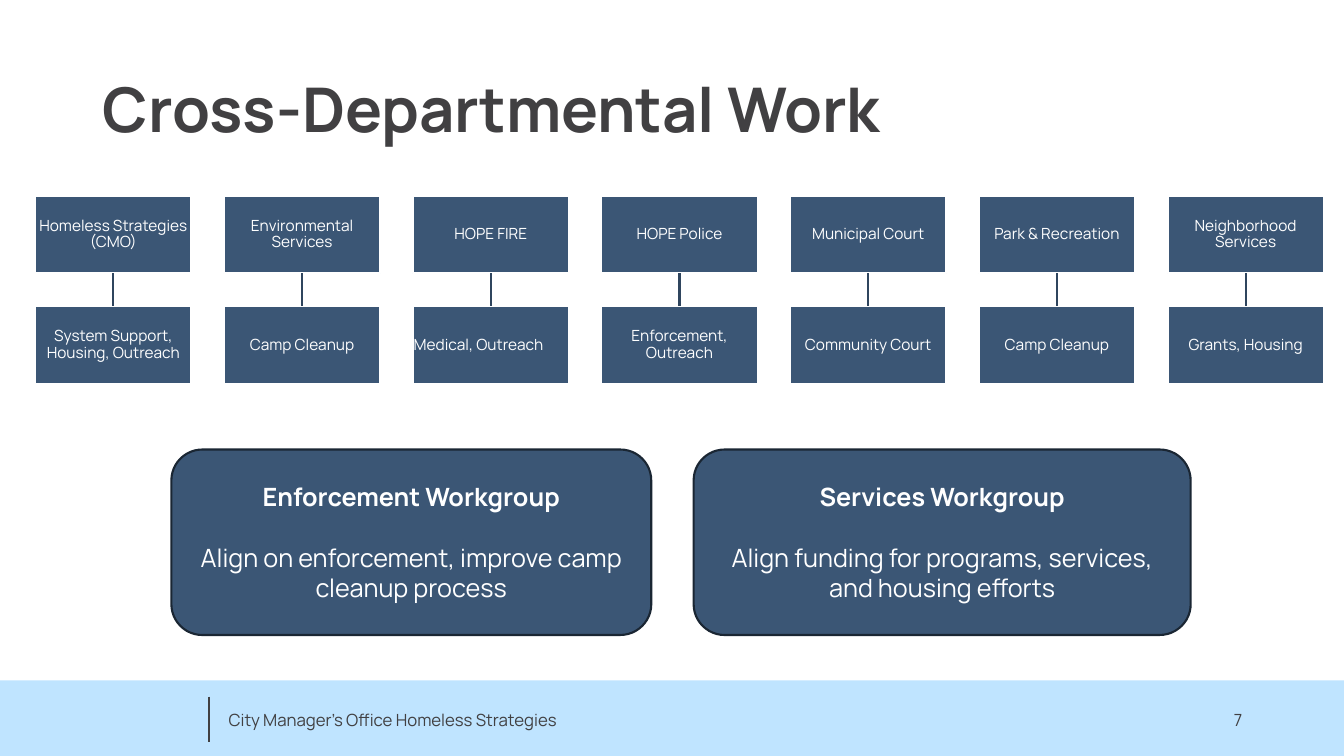
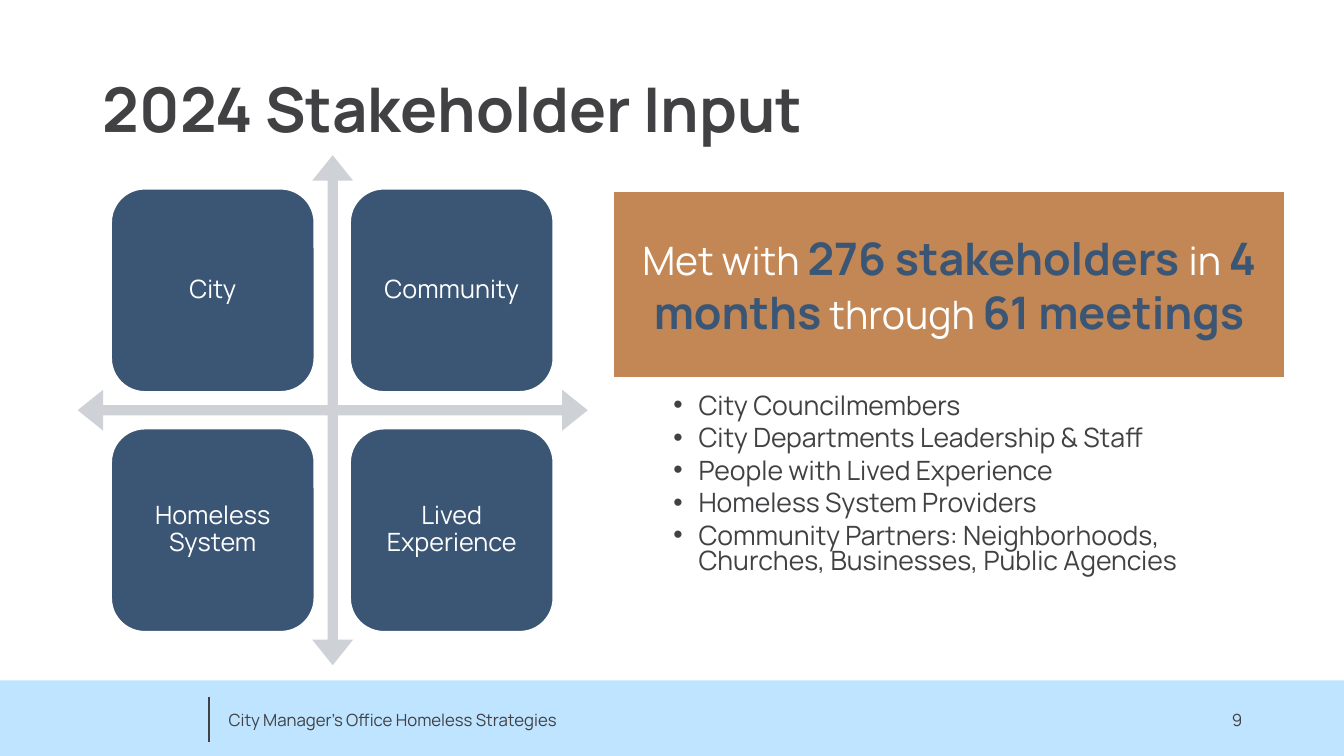
from dataclasses import dataclass

from lxml import etree
from pptx import Presentation
from pptx.dml.color import RGBColor
from pptx.enum import shapes, text
from pptx.oxml import ns
from pptx.util import Inches, Pt

FONT = "Manrope"
NAVY, INK, WHITE = "3B5675", "414042", "FFFFFF"
SKY, COPPER, GREY = "BFE4FF", "C28754", "CED1D6"
LINK, EDGE = "2F455E", "1A2633"

SHAPE = shapes.MSO_SHAPE
ALIGN = text.PP_ALIGN
ANCHOR = text.MSO_ANCHOR


@dataclass(frozen=True)
class Box:
    left: float
    top: float
    width: float
    height: float

    def emu(self):
        return [Inches(n) for n in (self.left, self.top, self.width, self.height)]


@dataclass(frozen=True)
class Department:
    name: str
    role: str
    role_align: ALIGN = ALIGN.CENTER


@dataclass(frozen=True)
class Workgroup:
    box: Box
    name: str
    purpose: str


@dataclass(frozen=True)
class Phrase:
    words: str
    strong: bool = False


DEPARTMENTS = [
    Department("Homeless Strategies (CMO)", "System Support, Housing, Outreach"),
    Department("Environmental Services", "Camp Cleanup"),
    Department("HOPE FIRE", "Medical, Outreach", ALIGN.LEFT),
    Department("HOPE Police", "Enforcement, Outreach"),
    Department("Municipal Court", "Community Court"),
    Department("Park & Recreation", "Camp Cleanup"),
    Department("Neighborhood Services", "Grants, Housing"),
]
WORKGROUPS = [
    Workgroup(Box(1.7, 4.46, 4.76, 1.84), "Enforcement Workgroup",
              "Align on enforcement, improve camp cleanup process"),
    Workgroup(Box(6.88, 4.46, 4.93, 1.84), "Services Workgroup",
              "Align funding for programs, services, and housing efforts"),
]
QUADRANTS = [["City", "Community"], ["Homeless System", "Lived Experience"]]
SUMMARY = [
    Phrase("Met with "), Phrase("276 stakeholders ", True), Phrase("in "),
    Phrase("4 months", True), Phrase(" through "), Phrase("61 meetings", True),
]
STAKEHOLDERS = [
    "City Councilmembers",
    "City Departments Leadership & Staff",
    "People with Lived Experience",
    "Homeless System Providers",
    "Community Partners: Neighborhoods, Churches, Businesses, Public Agencies",
]


def rgb(value: str) -> RGBColor:
    return RGBColor.from_string(value)


def set_font(font, size: float, color: str, bold: bool = False) -> None:
    font.name, font.size, font.bold = FONT, Pt(size), bold
    font.color.rgb = rgb(color)


def set_frame(frame, anchor=ANCHOR.MIDDLE, inset: float | None = None) -> None:
    frame.word_wrap = True
    frame.vertical_anchor = anchor
    if inset is not None:
        frame.margin_left = frame.margin_right = Inches(inset)
        frame.margin_top = frame.margin_bottom = Inches(inset)


def write(paragraph, words: str, size: float, color: str, bold: bool = False,
          align=ALIGN.LEFT, spacing: float | None = None) -> None:
    paragraph.text = words
    paragraph.alignment = align
    if spacing:
        paragraph.line_spacing = spacing
    set_font(paragraph.font, size, color, bold)


def add_panel(slide, kind, box: Box, fill: str, line: str | None = None,
              weight: float = 1.5):
    panel = slide.shapes.add_shape(kind, *box.emu())
    panel.shadow.inherit = False
    panel.fill.solid()
    panel.fill.fore_color.rgb = rgb(fill)
    if line:
        panel.line.color.rgb = rgb(line)
        panel.line.width = Pt(weight)
    else:
        panel.line.fill.background()
    return panel


def add_label_panel(slide, kind, box: Box, label: str, size: float,
                    inset: float, align=ALIGN.CENTER):
    panel = add_panel(slide, kind, box, NAVY, WHITE)
    set_frame(panel.text_frame, inset=inset)
    write(panel.text_frame.paragraphs[0], label, size, WHITE, align=align, spacing=0.9)
    return panel


def add_rule(slide, color: str, x: float = 0, top: float = 0, bottom: float = 0):
    rule = slide.shapes.add_connector(
        shapes.MSO_CONNECTOR.STRAIGHT, Inches(x), Inches(top), Inches(x), Inches(bottom))
    rule.line.color.rgb = rgb(color)
    rule.line.width = Pt(1.5)
    etree.SubElement(rule._element.spPr, ns.qn("a:effectLst"))
    return rule


def add_footer_text(slide, box: Box, words: str, align) -> None:
    frame = slide.shapes.add_textbox(*box.emu()).text_frame
    set_frame(frame)
    write(frame.paragraphs[0], words, 12, INK, align=align)


def add_titled_slide(deck, title: str, number: int):
    """Add a slide with the shared title style, footer band and page number."""
    slide = deck.slides.add_slide(deck.slide_layouts[5])
    add_panel(slide, SHAPE.RECTANGLE, Box(0, 6.75, 13.33, 0.75), SKY)
    add_rule(slide, INK, 2.07, 6.91, 7.36)
    add_footer_text(slide, Box(2.17, 6.94, 4.5, 0.4),
                    "City Manager's Office Homeless Strategies", ALIGN.LEFT)
    add_footer_text(slide, Box(9.42, 6.94, 3, 0.4), str(number), ALIGN.RIGHT)

    heading = slide.shapes.title
    heading.left, heading.top, heading.width, heading.height = Box(0.92, 0.74, 11.5, 0.8).emu()
    set_frame(heading.text_frame, ANCHOR.TOP)
    heading.text_frame.auto_size = text.MSO_AUTO_SIZE.NONE
    write(heading.text_frame.paragraphs[0], title, 44, INK, True, spacing=0.9)
    return slide


def add_department(slide, department: Department, left: float) -> None:
    name = add_label_panel(slide, SHAPE.RECTANGLE, Box(left, 1.94, 1.55, 0.77),
                           department.name, 11, 0.01)
    role = add_label_panel(slide, SHAPE.RECTANGLE, Box(left, 3.04, 1.55, 0.77),
                           department.role, 11, 0.01, department.role_align)
    link = add_rule(slide, LINK)
    link.begin_connect(name, 2)
    link.end_connect(role, 0)


def add_workgroup(slide, group: Workgroup) -> None:
    frame = add_panel(slide, SHAPE.ROUNDED_RECTANGLE, group.box, NAVY, EDGE).text_frame
    set_frame(frame)
    write(frame.paragraphs[0], group.name, 18, WHITE, True, ALIGN.CENTER)
    purpose = frame.add_paragraph()
    purpose.space_before = Pt(22)
    write(purpose, group.purpose, 18, WHITE, align=ALIGN.CENTER)


def add_quadrants(slide) -> None:
    arrows = add_panel(slide, SHAPE.QUAD_ARROW, Box(0.77, 1.54, 5.06, 5.06), GREY)
    for index, ratio in enumerate((0.02, 0.04, 0.05)):
        arrows.adjustments[index] = ratio
    for row, labels in enumerate(QUADRANTS):
        for column, label in enumerate(labels):
            box = Box(1.1 + 2.37 * column, 1.87 + 2.38 * row, 2.02, 2.02)
            add_label_panel(slide, SHAPE.ROUNDED_RECTANGLE, box, label, 18, 0.17)


def add_summary(slide) -> None:
    banner = add_panel(slide, SHAPE.RECTANGLE, Box(6.08, 1.89, 6.67, 1.86), COPPER, WHITE, 2)
    set_frame(banner.text_frame, inset=0.08)
    sentence = banner.text_frame.paragraphs[0]
    sentence.alignment = ALIGN.CENTER
    for phrase in SUMMARY:
        run = sentence.add_run()
        run.text = phrase.words
        size, color = (32, NAVY) if phrase.strong else (28, WHITE)
        set_font(run.font, size, color, phrase.strong)


def add_bullet(paragraph) -> None:
    properties = paragraph._p.get_or_add_pPr()
    properties.set("marL", str(Inches(0.75)))
    properties.set("indent", str(Inches(-0.25)))
    etree.SubElement(properties, ns.qn("a:buFont"), typeface="Arial")
    etree.SubElement(properties, ns.qn("a:buChar"), char="•")


def add_stakeholders(slide) -> None:
    frame = slide.shapes.add_textbox(*Box(6.08, 3.87, 6.67, 2.17).emu()).text_frame
    set_frame(frame, ANCHOR.TOP)
    for index, stakeholder in enumerate(STAKEHOLDERS):
        paragraph = frame.add_paragraph() if index else frame.paragraphs[0]
        paragraph.level = 1
        add_bullet(paragraph)
        if index:
            paragraph.space_before = Pt(5)
        write(paragraph, stakeholder, 19, INK, spacing=0.8)


def main() -> None:
    deck = Presentation()
    deck.slide_width, deck.slide_height = Inches(13.33), Inches(7.5)

    departmental = add_titled_slide(deck, "Cross-Departmental Work", 7)
    first_left, last_left = 0.35, 11.58
    pitch = (last_left - first_left) / (len(DEPARTMENTS) - 1)
    for index, department in enumerate(DEPARTMENTS):
        add_department(departmental, department, first_left + index * pitch)
    for group in WORKGROUPS:
        add_workgroup(departmental, group)

    stakeholder_input = add_titled_slide(deck, "2024 Stakeholder Input", 9)
    add_quadrants(stakeholder_input)
    add_summary(stakeholder_input)
    add_stakeholders(stakeholder_input)

    deck.save("out.pptx")


if __name__ == "__main__":
    main()
